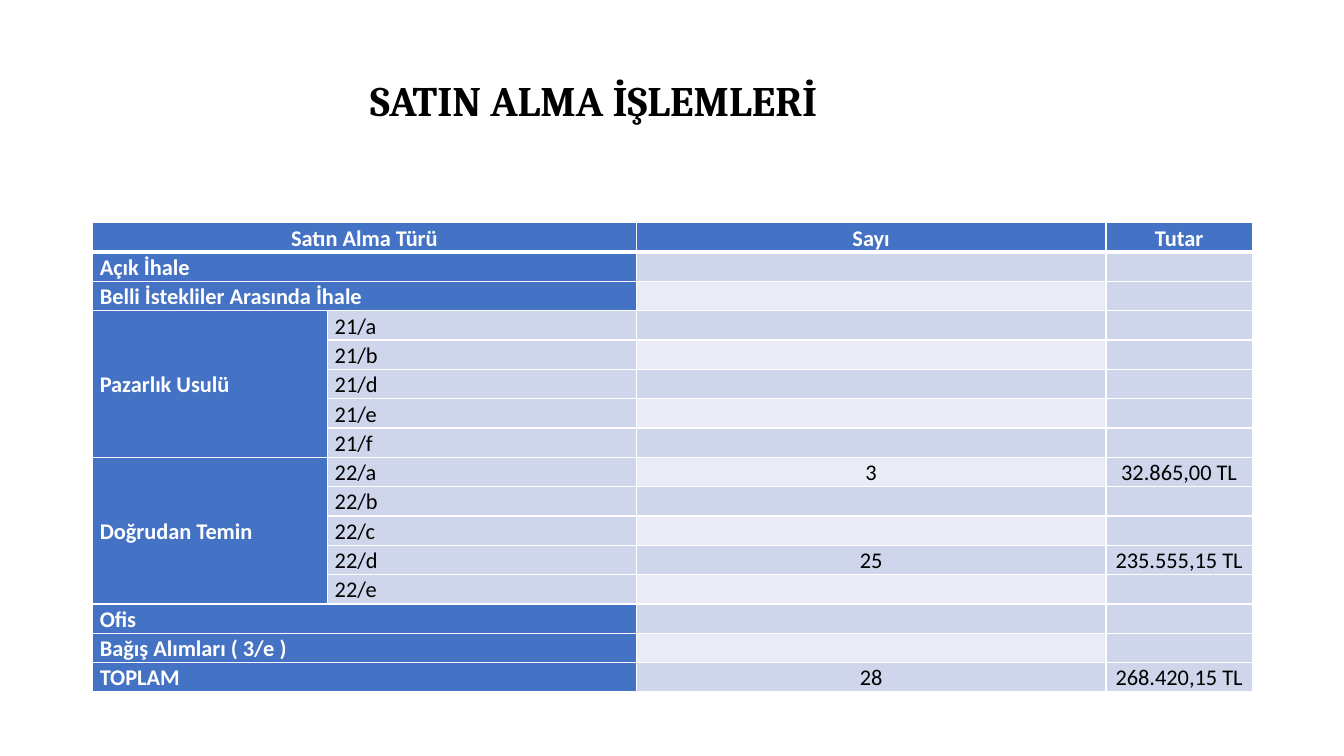
import lxml.etree
import pptx
import pptx.dml.color
import pptx.enum.text
import pptx.oxml.ns
import pptx.util

Inches, Pt = pptx.util.Inches, pptx.util.Pt
ALIGN = pptx.enum.text.PP_ALIGN
MIDDLE = pptx.enum.text.MSO_ANCHOR.MIDDLE
qn = pptx.oxml.ns.qn

BLUE, BAND, PALE = "4472C4", "CFD5EA", "E9EBF5"
WHITE, BLACK = "FFFFFF", "000000"
WIDTHS = [2.33, 3.06, 4.66, 1.45]
HEAD = ["Satın Alma Türü", "", "Sayı", "Tutar"]
# Each type with its articles; a type without articles spans two columns
TYPES = [
    ("Açık İhale", []),
    ("Belli İstekliler Arasında İhale", []),
    ("Pazarlık Usulü", ["21/a", "21/b", "21/d", "21/e", "21/f"]),
    ("Doğrudan Temin", ["22/a", "22/b", "22/c", "22/d", "22/e"]),
    ("Ofis", []),
    ("Bağış Alımları ( 3/e )", []),
    ("TOPLAM", []),
]
SUMS = {
    "22/a": ["3", "32.865,00 TL"],
    "22/d": ["25", "235.555,15 TL"],
    "TOPLAM": ["28", "268.420,15 TL"],
}


def color(code):
    return pptx.dml.color.RGBColor.from_string(code)


def apply(item, values):
    for name, value in values.items():
        setattr(item, name, value)


def write(para, text, face, size, code, bold):
    if text:
        run = para.add_run()
        run.text = text
        apply(run.font, {"name": face, "size": Pt(size), "bold": bold})
        run.font.color.rgb = color(code)
    else:
        # Keep the row low where a cell has no text
        lxml.etree.SubElement(para._p, qn("a:endParaRPr"), sz=str(size * 100))


def border(cell, sides):
    props = cell._tc.get_or_add_tcPr()
    for place, (side, width) in enumerate(sides.items()):
        line = lxml.etree.Element(qn("a:ln" + side), w=str(Pt(width)))
        fill = lxml.etree.SubElement(line, qn("a:solidFill"))
        lxml.etree.SubElement(fill, qn("a:srgbClr"), val=WHITE)
        props.insert(place, line)


def fill_cell(cell, text, row, col):
    dark = row == 0 or col == 0
    shade = BLUE if dark else PALE if col == 2 and row % 2 == 0 else BAND
    apply(cell, {"margin_left": Inches(0.07), "margin_right": Inches(0.07),
                 "margin_top": 0, "margin_bottom": 0,
                 "vertical_anchor": MIDDLE})
    cell.fill.solid()
    cell.fill.fore_color.rgb = color(shade)
    para = cell.text_frame.paragraphs[0]
    center = row == 0 or col > 1
    apply(para, {"alignment": ALIGN.CENTER if center else ALIGN.LEFT,
                 "line_spacing": 1.07, "space_after": Pt(8)})
    write(para, text, "Calibri", 16, WHITE if dark else BLACK, dark)
    border(cell, {"L": 1, "R": 1, "T": 3 if row == 1 else 1,
                  "B": 3 if row == 0 else 1})


def add_title(slide, text):
    title = slide.shapes.title
    apply(title, {"left": Inches(0.14), "top": Inches(0.65),
                  "width": Inches(11.5), "height": Inches(0.74)})
    frame = title.text_frame
    apply(frame, {"vertical_anchor": MIDDLE, "word_wrap": True,
                  "auto_size": pptx.enum.text.MSO_AUTO_SIZE.NONE})
    para = frame.paragraphs[0]
    apply(para, {"alignment": ALIGN.CENTER, "line_spacing": 0.9})
    write(para, text, "Cambria", 30, BLACK, True)


def list_rows():
    rows, spans = [HEAD], [(0, 0, 0, 1)]
    for kind, items in TYPES:
        first = len(rows)
        for place, item in enumerate(items or [""]):
            sums = SUMS.get(item or kind, ["", ""])
            rows.append([kind if place == 0 else "", item, *sums])
        spans.append((first, 0, len(rows) - 1, 0 if items else 1))
    return rows, spans


def add_grid(slide):
    rows, spans = list_rows()
    frame = slide.shapes.add_table(
        len(rows), len(WIDTHS), Inches(0.92), Inches(2.21),
        Inches(sum(WIDTHS)), Inches(0.29 * len(rows)))
    table = frame.table
    table.horz_banding = False
    for col, width in zip(table.columns, WIDTHS):
        col.width = Inches(width)
    for r, texts in enumerate(rows):
        table.rows[r].height = Inches(0.29)
        for c, text in enumerate(texts):
            fill_cell(table.cell(r, c), text, r, c)
    for top, left, low, right in spans:
        table.cell(top, left).merge(table.cell(low, right))


def main():
    deck = pptx.Presentation()
    apply(deck, {"slide_width": Inches(13.33), "slide_height": Inches(7.5)})
    slide = deck.slides.add_slide(deck.slide_layouts[5])
    add_title(slide, "SATIN ALMA İŞLEMLERİ")
    add_grid(slide)
    deck.save("out.pptx")


if __name__ == "__main__":
    main()
